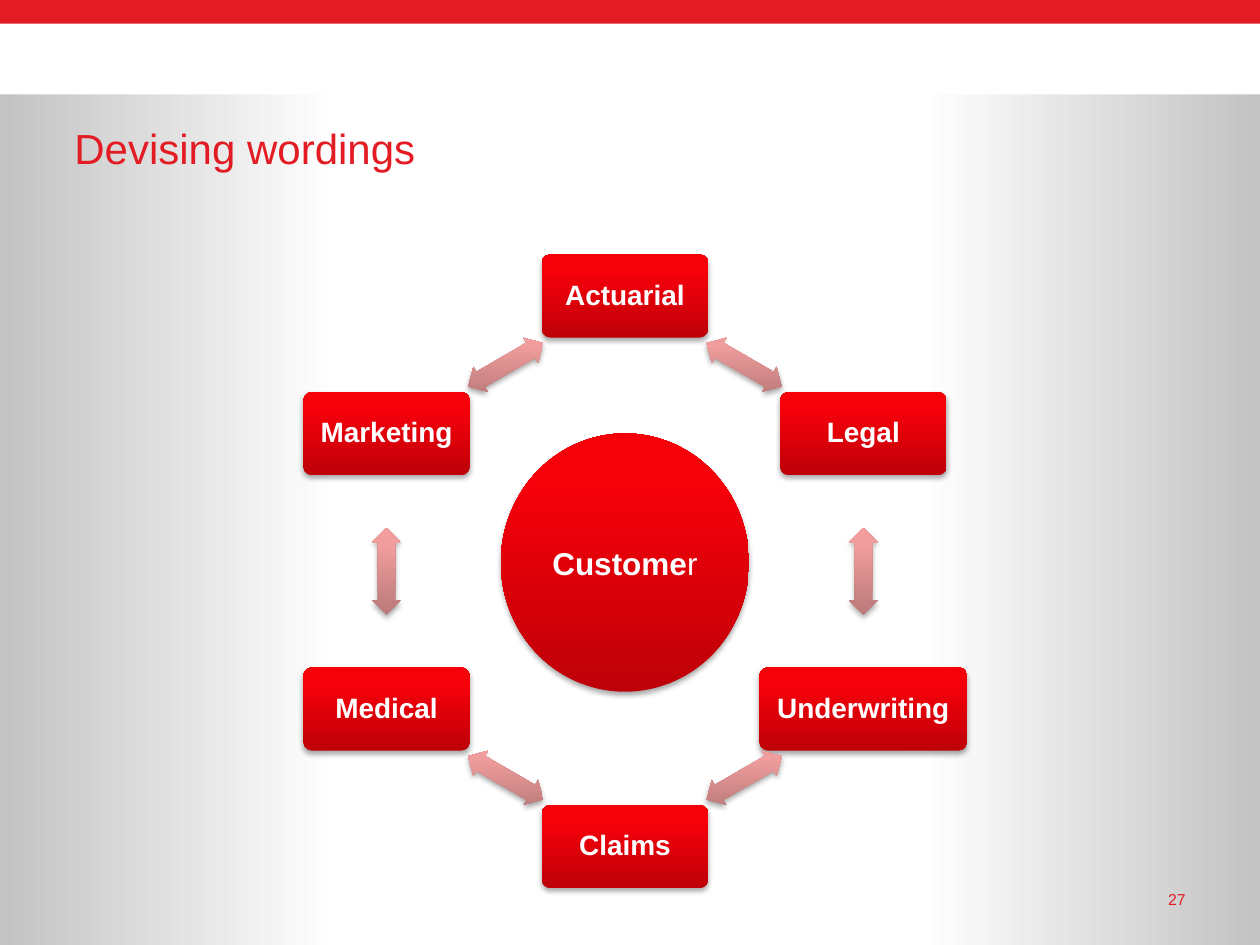
from math import cos, radians, sin

from lxml import etree
from pptx import Presentation
from pptx.dml.color import RGBColor
from pptx.enum.shapes import MSO_SHAPE
from pptx.enum.text import MSO_ANCHOR, PP_ALIGN
from pptx.oxml import parse_xml
from pptx.oxml.ns import qn
from pptx.util import Inches, Pt

DRAWING_NS = "http://schemas.openxmlformats.org/drawingml/2006/main"
RED = "E31B23"
WHITE = "FFFFFF"
BACKDROP_STOPS = [(0, "C3C3C3"), (27, WHITE), (73, WHITE), (100, "C3C3C3")]
TEAM_STOPS = [(0, "BE0008"), (80, "F6000A"), (100, "F7000A")]
ARROW_STOPS = [(0, "BA7979"), (80, "F19D9D"), (100, "F49C9D")]
TEAMS = ["Actuarial", "Legal", "Underwriting", "Claims", "Medical", "Marketing"]
TEAM_WIDTHS = {"Underwriting": 1.65}


def color(hex_string):
    return RGBColor.from_string(hex_string)


def add_text(shape, text, size=16, hue=WHITE, bold=False, align=PP_ALIGN.LEFT,
             anchor=MSO_ANCHOR.TOP, insets=None, spacing=None):
    frame = shape.text_frame
    frame.word_wrap = True
    frame.vertical_anchor = anchor
    if insets:
        (frame.margin_left, frame.margin_top,
         frame.margin_right, frame.margin_bottom) = map(Inches, insets)
    paragraph = frame.paragraphs[0]
    paragraph.alignment = align
    paragraph.line_spacing = spacing
    run = paragraph.add_run()
    run.text = text
    run.font.name = "Arial"
    run.font.size = Pt(size)
    run.font.bold = bold
    run.font.color.rgb = color(hue)


def set_gradient(fill, element, stops, angle):
    fill.gradient()
    default = next(element.iter(qn("a:gradFill")))
    stop_xml = "".join(
        f'<a:gs pos="{position * 1000}"><a:srgbClr val="{hue}"/></a:gs>'
        for position, hue in stops)
    default.getparent().replace(default, parse_xml(
        f'<a:gradFill xmlns:a="{DRAWING_NS}" rotWithShape="0">'
        f'<a:gsLst>{stop_xml}</a:gsLst>'
        f'<a:lin ang="{angle * 60000}" scaled="0"/></a:gradFill>'))


def set_shadow(shape):
    shape.shadow.inherit = False
    effects = shape._element.spPr.find(qn("a:effectLst"))
    shadow = etree.SubElement(effects, qn("a:outerShdw"), blurRad="40000",
                              dist="23000", dir="5400000", rotWithShape="0")
    shade = etree.SubElement(shadow, qn("a:srgbClr"), val="000000")
    etree.SubElement(shade, qn("a:alpha"), val="35000")


def add_glossy(slide, preset, center_x, center_y, width, height, stops):
    shape = slide.shapes.add_shape(
        preset, Inches(center_x - width / 2), Inches(center_y - height / 2),
        Inches(width), Inches(height))
    set_gradient(shape.fill, shape._element, stops, 270)
    shape.line.fill.background()
    set_shadow(shape)
    return shape


def add_band(slide, left, top, width, height, hue):
    band = slide.shapes.add_shape(
        MSO_SHAPE.RECTANGLE, *map(Inches, (left, top, width, height)))
    band.fill.solid()
    band.fill.fore_color.rgb = color(hue)
    band.line.fill.background()
    band.shadow.inherit = False


def add_header(slide, left, top, width, height):
    add_band(slide, left, top, width, height, WHITE)
    add_band(slide, left, top, width, height / 4, RED)


def add_label(slide, left, top, width, height, text, **text_format):
    label = slide.shapes.add_textbox(
        *map(Inches, (left, top, width, height)))
    add_text(label, text, hue=RED, **text_format)


def add_team_cycle(slide, left, top, width, height):
    team_width, team_height = 1.32, 0.66
    center_x, center_y = left + width / 2, top + height / 2
    radius = (height - team_height) / 2
    step = 360 / len(TEAMS)

    def ring_point(angle, distance):
        return (center_x + distance * sin(radians(angle)),
                center_y - distance * cos(radians(angle)))

    for index, team_name in enumerate(TEAMS):
        angle = index * step
        team = add_glossy(slide, MSO_SHAPE.ROUNDED_RECTANGLE,
                          *ring_point(angle, radius),
                          TEAM_WIDTHS.get(team_name, team_width), team_height,
                          TEAM_STOPS)
        team.adjustments[0] = 0.1
        add_text(team, team_name, bold=True, align=PP_ALIGN.CENTER,
                 anchor=MSO_ANCHOR.MIDDLE, insets=[0.07] * 4, spacing=0.9)

        middle = angle + step / 2
        exchange = add_glossy(slide, MSO_SHAPE.LEFT_RIGHT_ARROW,
                              *ring_point(middle, radius * cos(radians(step / 2))),
                              0.69, 0.23, ARROW_STOPS)
        exchange.adjustments[0] = 0.6
        exchange.adjustments[1] = 0.5
        exchange.rotation = middle

    customer = add_glossy(slide, MSO_SHAPE.OVAL, center_x, center_y - 0.07,
                          1.97, 2.05, TEAM_STOPS)
    for text, bold in [("Custome", True), ("r", False)]:
        add_text(customer, text, size=18, bold=bold, align=PP_ALIGN.CENTER,
                 anchor=MSO_ANCHOR.MIDDLE)


def main():
    presentation = Presentation()
    presentation.slide_width = Inches(10)
    presentation.slide_height = Inches(7.5)
    slide = presentation.slides.add_slide(presentation.slide_layouts[6])
    set_gradient(slide.background.fill, slide._element, BACKDROP_STOPS, 0)
    add_header(slide, 0, 0, 10, 0.75)
    add_label(slide, 0.59, 0.92, 8.82, 0.55, "Devising wordings",
              size=24, insets=[0, 0.05, 0, 0])
    add_label(slide, 8.86, 7.06, 0.55, 0.24, "27",
              size=9, align=PP_ALIGN.RIGHT, insets=[0] * 4)
    add_team_cycle(slide, 2.4, 2.02, 5.12, 5.03)
    presentation.save("out.pptx")


if __name__ == "__main__":
    main()
